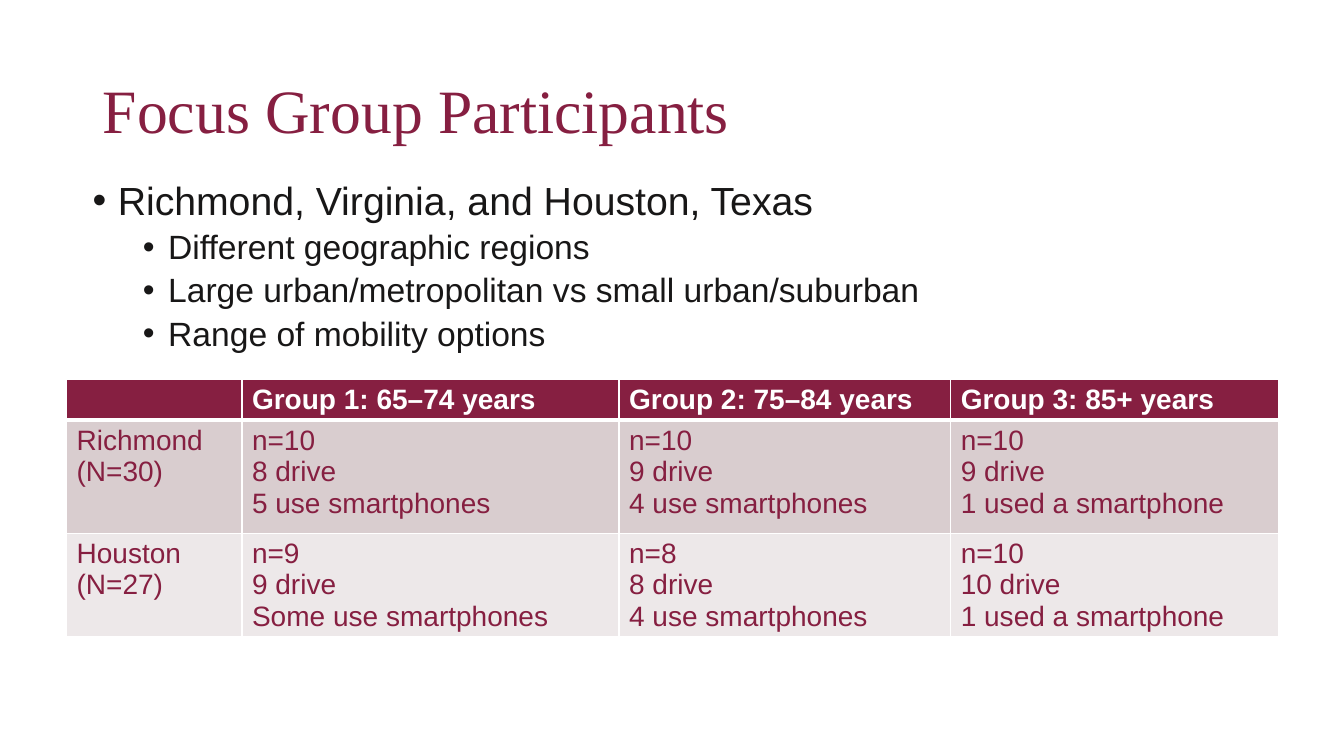
"""Build the Focus Group Participants slide."""
from dataclasses import dataclass

from lxml.etree import SubElement
from pptx import Presentation
from pptx.dml.color import RGBColor
from pptx.enum.text import MSO_ANCHOR, PP_ALIGN
from pptx.oxml.ns import qn
from pptx.util import Pt

TITLE = "Focus Group Participants"
BULLETS = [
    (0, "Richmond, Virginia, and Houston, Texas"),
    (1, "Different geographic regions"),
    (1, "Large urban/metropolitan vs small urban/suburban"),
    (1, "Range of mobility options"),
]
TABLE_ROWS = [
    ([], ["Group 1: 65–74 years"], ["Group 2: 75–84 years"], ["Group 3: 85+ years"]),
    (
        ["Richmond (N=30)"],
        ["n=10", "8 drive", "5 use smartphones"],
        ["n=10", "9 drive", "4 use smartphones"],
        ["n=10", "9 drive", "1 used a smartphone"],
    ),
    (
        ["Houston (N=27)"],
        ["n=9", "9 drive", "Some use smartphones"],
        ["n=8", "8 drive", "4 use smartphones"],
        ["n=10", "10 drive", "1 used a smartphone"],
    ),
]

PX = 9144
SLIDE_SIZE = (1333, 750)
TITLE_BOX = (92, 40, 1150, 145)
BULLET_BOX = (82, 175, 1150, 469)
TABLE_ORIGIN = (66, 376)
COLUMN_WIDTHS = (174, 374, 329, 325)
ROW_HEIGHTS = (41, 112, 102)
INDENT, LEVEL_STEP = 25, 50


@dataclass(frozen=True)
class Theme:
    """Colours, fonts and type sizes."""

    maroon: str = "861F41"
    ink: str = "181717"
    white: str = "FFFFFF"
    bands: tuple = ("861F41", "D9CDCF", "EDE8E9")
    title_font: str = "Times New Roman"
    body_font: str = "Arial"
    title_size: int = 44
    bullet_sizes: tuple = (28, 24)
    bullet_spaces: tuple = (10, 5)
    table_size: int = 20
    thin: int = 1
    thick: int = 3


THEME = Theme()


def emu(*lengths):
    """Turn px lengths into EMU."""
    return [length * PX for length in lengths]


def apply_format(target, values):
    """Set every attribute named in values."""
    for name, value in values.items():
        setattr(target, name, value)


def format_font(font, name, size, color, bold=False):
    """Set typeface, size, colour and weight."""
    apply_format(font, {"name": name, "size": Pt(size), "bold": bold})
    font.color.rgb = RGBColor.from_string(color)


def fill_paragraphs(text_frame, lines):
    """Write one paragraph per line and return the paragraphs."""
    text_frame.text = "\n".join(lines)
    return text_frame.paragraphs


def add_title(slide):
    """Place and format the title placeholder."""
    title = slide.shapes.title
    apply_format(title, dict(zip(("left", "top", "width", "height"), emu(*TITLE_BOX))))
    title.text_frame.vertical_anchor = MSO_ANCHOR.MIDDLE
    paragraph = fill_paragraphs(title.text_frame, [TITLE])[0]
    apply_format(paragraph, {"alignment": PP_ALIGN.LEFT, "line_spacing": 0.9})
    format_font(paragraph.runs[0].font, THEME.title_font, THEME.title_size, THEME.maroon)


def add_bullets(slide):
    """Add the two-level bullet list."""
    text_frame = slide.shapes.add_textbox(*emu(*BULLET_BOX)).text_frame
    text_frame.word_wrap = True
    paragraphs = fill_paragraphs(text_frame, [text for _, text in BULLETS])
    for index, (paragraph, (level, _)) in enumerate(zip(paragraphs, BULLETS)):
        space = THEME.bullet_spaces[level] if index else 0
        apply_format(paragraph, {"level": level, "line_spacing": 0.9, "space_before": Pt(space)})
        properties = paragraph._p.get_or_add_pPr()
        properties.set("marL", str((INDENT + level * LEVEL_STEP) * PX))
        properties.set("indent", str(-INDENT * PX))
        SubElement(properties, qn("a:buFont"), typeface=THEME.body_font)
        SubElement(properties, qn("a:buChar"), char="•")
        format_font(paragraph.runs[0].font, THEME.body_font, THEME.bullet_sizes[level], THEME.ink)


def add_borders(cell, top, bottom):
    """Draw white borders on the four sides of a cell."""
    widths = {"a:lnL": THEME.thin, "a:lnR": THEME.thin, "a:lnT": top, "a:lnB": bottom}
    for tag, width in widths.items():
        line = SubElement(cell._tc.get_or_add_tcPr(), qn(tag), w=str(Pt(width)))
        SubElement(SubElement(line, qn("a:solidFill")), qn("a:srgbClr"), val=THEME.white)


def add_participant_table(slide):
    """Add the table of participants by city and age group."""
    size = (sum(COLUMN_WIDTHS), sum(ROW_HEIGHTS))
    frame = slide.shapes.add_table(
        len(ROW_HEIGHTS), len(COLUMN_WIDTHS), *emu(*TABLE_ORIGIN, *size)
    )
    table = frame.table
    for column, width in zip(table.columns, emu(*COLUMN_WIDTHS)):
        column.width = width
    for row, height in zip(table.rows, emu(*ROW_HEIGHTS)):
        row.height = height
    for row_index, row in enumerate(TABLE_ROWS):
        header = row_index == 0
        color = THEME.white if header else THEME.maroon
        top = THEME.thick if row_index == 1 else THEME.thin
        bottom = THEME.thick if header else THEME.thin
        for column_index, lines in enumerate(row):
            cell = table.cell(row_index, column_index)
            add_borders(cell, top, bottom)
            cell.fill.solid()
            cell.fill.fore_color.rgb = RGBColor.from_string(THEME.bands[row_index])
            for paragraph in fill_paragraphs(cell.text_frame, lines):
                for run in paragraph.runs:
                    format_font(run.font, THEME.body_font, THEME.table_size, color, header)


def main():
    """Build and save the presentation."""
    presentation = Presentation()
    apply_format(presentation, dict(zip(("slide_width", "slide_height"), emu(*SLIDE_SIZE))))
    slide = presentation.slides.add_slide(presentation.slide_layouts[5])
    add_title(slide)
    add_participant_table(slide)
    add_bullets(slide)
    presentation.save("out.pptx")


if __name__ == "__main__":
    main()
